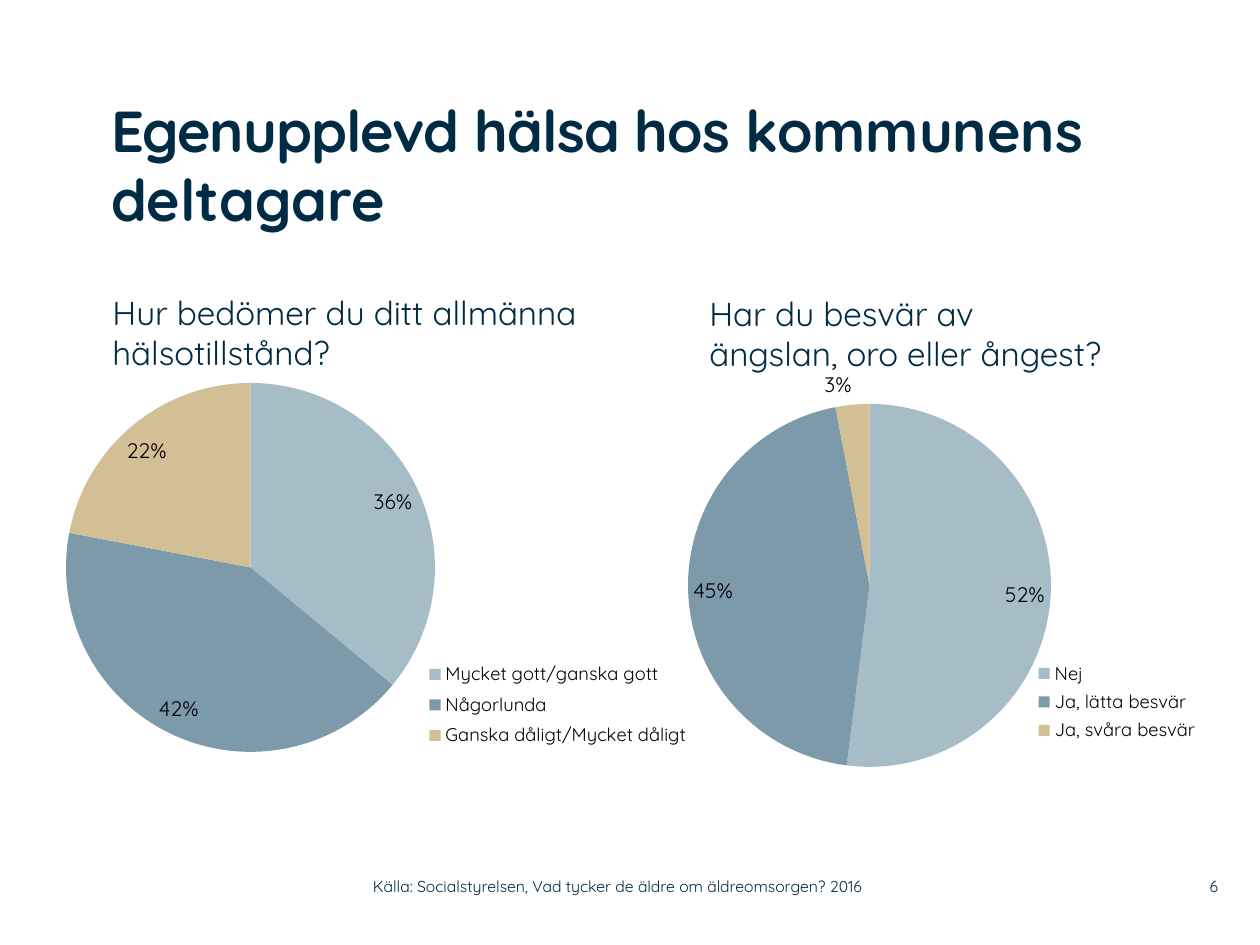
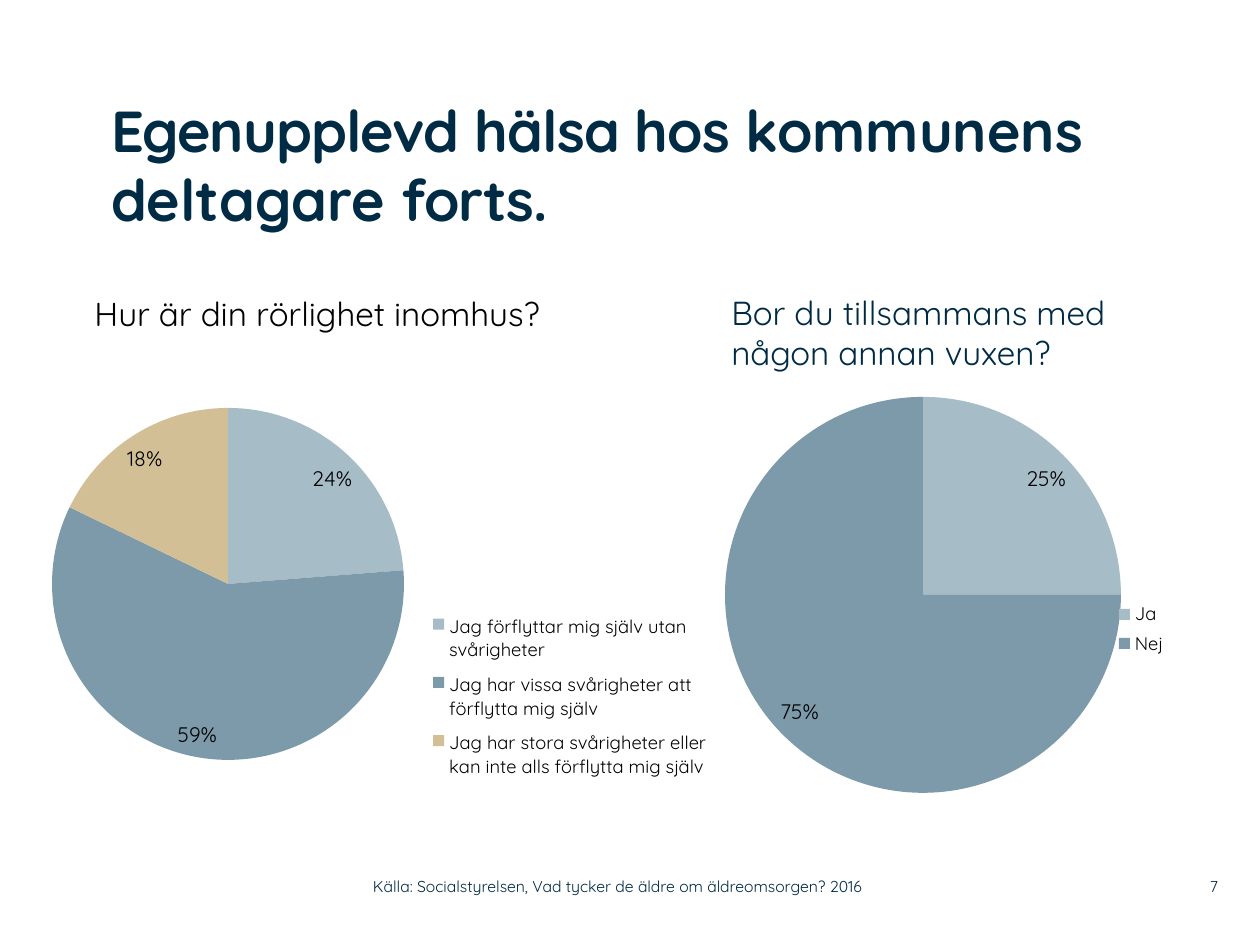
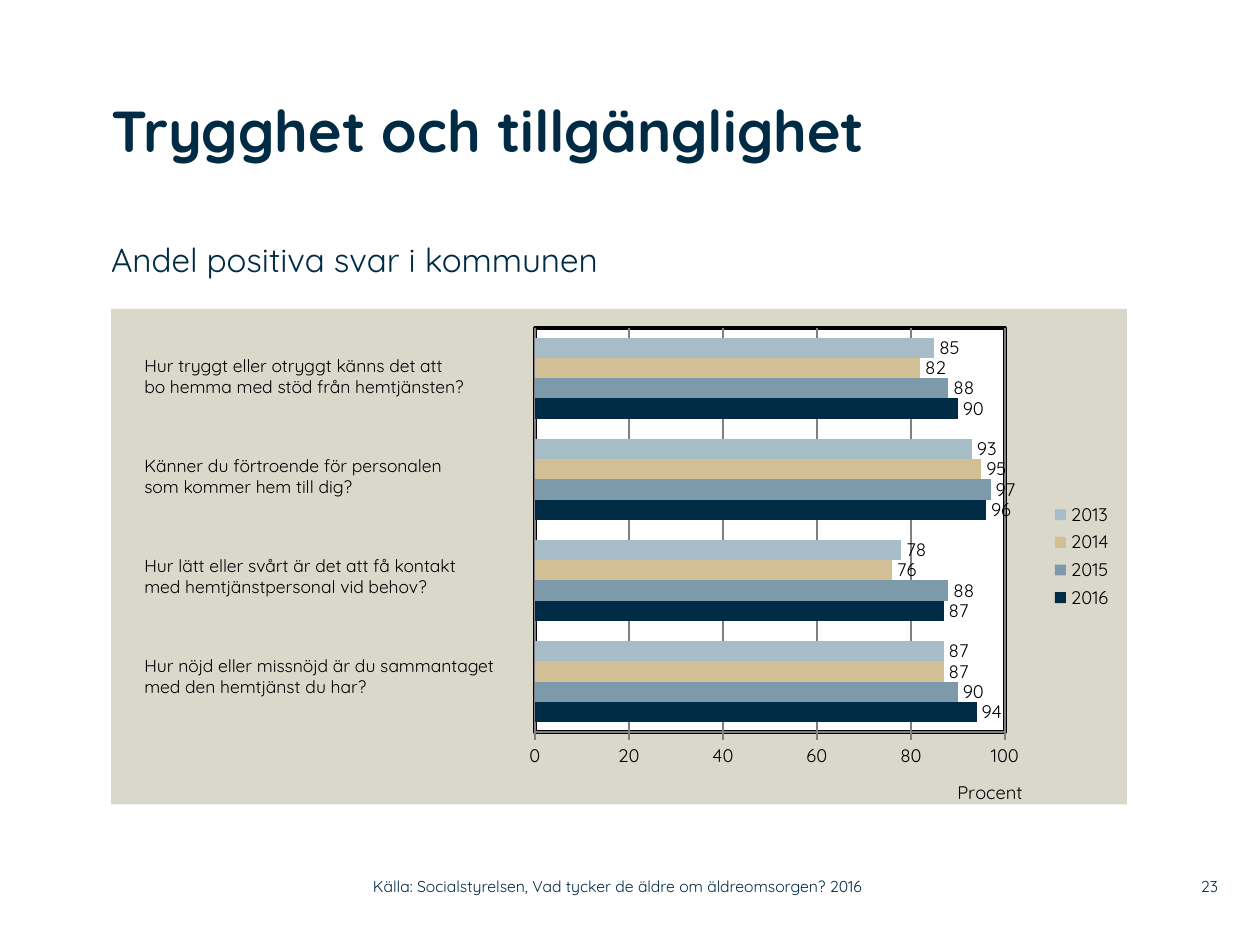
from dataclasses import dataclass
from typing import NamedTuple

from lxml import etree
from pptx import Presentation
from pptx.chart.data import CategoryChartData
from pptx.dml.color import RGBColor
from pptx.enum.chart import (
    XL_CHART_TYPE as ChartType,
    XL_LABEL_POSITION as LabelPos,
    XL_LEGEND_POSITION as LegendPos,
    XL_TICK_MARK as TickMark,
)
from pptx.enum.text import MSO_ANCHOR as Anchor, PP_ALIGN as Align
from pptx.util import Emu, Pt

# Shared look
PX_PER_INCH = 126
SCALE = 914400 / PX_PER_INCH
FONT = "Quicksand"
NAVY, BLACK, WHITE = "002B45", "000000", "FFFFFF"
MIST, STEEL, SAND = "A6BCC6", "7D9AAA", "D3BF96"
PANEL, GRID = "DAD7CB", "808080"
SOURCE_LINE = "Källa: Socialstyrelsen, Vad tycker de äldre om äldreomsorgen? 2016"
NS_C = "http://schemas.openxmlformats.org/drawingml/2006/chart"
NS_A = "http://schemas.openxmlformats.org/drawingml/2006/main"


class Box(NamedTuple):
    left: int
    top: int
    width: int
    height: int

    def emu(self) -> list[Emu]:
        return [px(length) for length in self]


class Run(NamedTuple):
    text: str
    tight: bool = False


@dataclass
class Style:
    size: float
    color: str = NAVY
    bold: bool = False
    inset: bool = False
    align: Align = Align.LEFT
    anchor: Anchor = Anchor.TOP


@dataclass
class Question:
    text: str
    box: Box
    style: Style


@dataclass
class Pie:
    frame: Box
    circle: Box
    legend: Box
    answers: dict[str, int]


TITLE = Style(33, bold=True)
HEADING = Style(19, inset=True)
BLACK_HEADING = Style(19, BLACK, inset=True)
SUBTITLE = Style(19)
BAR_QUESTION = Style(10, BLACK, inset=True)
FOOTER = Style(9, anchor=Anchor.MIDDLE)
PAGE_NUMBER = Style(9, align=Align.RIGHT, anchor=Anchor.MIDDLE)


# Helpers
def px(length: int) -> Emu:
    return Emu(round(length * SCALE))


def rgb(color: str) -> RGBColor:
    return RGBColor.from_string(color)


def apply(target, values: dict) -> None:
    for key, value in values.items():
        setattr(target, key, value)


def set_font(font, size: float, color: str = BLACK, bold: bool = False) -> None:
    apply(font, {"name": FONT, "size": Pt(size), "bold": bold})
    font.color.rgb = rgb(color)


def add_text(slide, box: Box, runs: list[Run], style: Style) -> None:
    frame = slide.shapes.add_textbox(*box.emu()).text_frame
    apply(frame, {"word_wrap": True, "vertical_anchor": style.anchor})
    if not style.inset:
        sides = ("left", "top", "right", "bottom")
        apply(frame, {f"margin_{side}": 0 for side in sides})
    paragraph = frame.paragraphs[0]
    paragraph.alignment = style.align
    for part in runs:
        for index, line in enumerate(part.text.split("\n")):
            if index:
                paragraph.add_line_break()
            run = paragraph.add_run()
            run.text = line
            set_font(run.font, style.size, style.color, style.bold)
            if part.tight:
                run._r.get_or_add_rPr().set("spc", "-50")


def place(element, index: int, frame: Box, part: Box, sized: bool = True) -> None:
    """Fix a chart part at a slide position inside its chart frame."""
    for old in element.findall(f"{{{NS_C}}}layout"):
        element.remove(old)
    layout = etree.Element(f"{{{NS_C}}}layout")
    manual = etree.SubElement(layout, f"{{{NS_C}}}manualLayout")
    settings = {"xMode": "edge", "yMode": "edge",
                "x": (part.left - frame.left) / frame.width,
                "y": (part.top - frame.top) / frame.height}
    if index == 0:
        settings = {"layoutTarget": "inner"} | settings
    if sized:
        settings |= {"w": part.width / frame.width, "h": part.height / frame.height}
    for tag, value in settings.items():
        text = value if isinstance(value, str) else f"{value:.4f}"
        etree.SubElement(manual, f"{{{NS_C}}}{tag}", val=text)
    element.insert(index, layout)


def area_format(fill: str = "", line: str = "", width: float = 1):
    def paint(color: str) -> str:
        if not color:
            return "<a:noFill/>"
        return f'<a:solidFill><a:srgbClr val="{color}"/></a:solidFill>'

    return etree.fromstring(
        f'<c:spPr xmlns:c="{NS_C}" xmlns:a="{NS_A}">{paint(fill)}'
        f'<a:ln w="{Pt(width)}">{paint(line)}</a:ln></c:spPr>')


def add_chart(slide, kind, frame: Box, plot: Box, legend: Box, data, fill: str = ""):
    chart = slide.shapes.add_chart(kind, *frame.emu(), data).chart
    apply(chart, {"has_title": False, "has_legend": True})
    set_font(chart.font, 10)
    apply(chart.legend, {"position": LegendPos.RIGHT, "include_in_layout": False})
    set_font(chart.legend.font, 10.5)
    place(chart.legend._element, 1, frame, legend)
    root = chart._chartSpace.chart
    place(root.plotArea, 0, frame, plot)
    root.addnext(area_format(fill))
    return chart


def add_pie(slide, pie: Pie) -> None:
    data = CategoryChartData()
    data.categories = list(pie.answers)
    data.add_series("Series 1", list(pie.answers.values()))
    chart = add_chart(slide, ChartType.PIE, pie.frame, pie.circle, pie.legend, data)
    plot = chart.plots[0]
    apply(plot, {"vary_by_categories": True, "has_data_labels": True})
    for index, color in zip(range(len(pie.answers)), (MIST, STEEL, SAND)):
        fill = plot.series[0].points[index].format.fill
        fill.solid()
        fill.fore_color.rgb = rgb(color)
    apply(plot.data_labels, {
        "show_value": True, "number_format": '0"%"',
        "number_format_is_linked": False, "position": LabelPos.BEST_FIT})
    set_font(plot.data_labels.font, 12)


def add_bars(slide, years: dict[str, tuple[str, list[int]]]) -> None:
    frame = Box(111, 309, 1016, 501)
    data = CategoryChartData()
    data.categories = ["1", "2", "3", "4"]
    for year, (_, shares) in years.items():
        data.add_series(year, shares)
    chart = add_chart(slide, ChartType.BAR_CLUSTERED, frame, Box(535, 328, 470, 409),
                      Box(1048, 501, 68, 116), data, PANEL)
    chart._chartSpace.chart.plotArea.append(area_format(WHITE, BLACK, 2))

    # Bars and their values
    apply(chart.plots[0], {"gap_width": 100, "overlap": 0, "vary_by_categories": False})
    for series, (color, _) in zip(chart.plots[0].series, years.values()):
        series.format.fill.solid()
        series.format.fill.fore_color.rgb = rgb(color)
        apply(series.data_labels, {"show_value": True, "position": LabelPos.OUTSIDE_END})
        set_font(series.data_labels.font, 10.5)

    # Percent scale
    chart.category_axis.visible = False
    scale = chart.value_axis
    apply(scale, {
        "minimum_scale": 0, "maximum_scale": 100, "major_unit": 20,
        "has_major_gridlines": True, "has_title": True,
        "major_tick_mark": TickMark.OUTSIDE, "minor_tick_mark": TickMark.NONE})
    set_font(scale.tick_labels.font, 10.5)
    for line in (scale.format.line, scale.major_gridlines.format.line):
        line.color.rgb = rgb(GRID)
        line.width = Pt(1)
    unit = scale.axis_title.text_frame.paragraphs[0].add_run()
    unit.text = "Procent"
    set_font(unit.font, 10.5)
    place(scale.axis_title._element, 1, frame, Box(954, 781, 65, 22), sized=False)


def add_page(deck, title: list[Run], number: int):
    slide = deck.slides.add_slide(deck.slide_layouts[6])
    add_text(slide, Box(111, 95, 1042, 179), title, TITLE)
    add_text(slide, Box(1159, 868, 59, 37), [Run(str(number))], PAGE_NUMBER)
    add_text(slide, Box(373, 868, 558, 37), [Run(SOURCE_LINE)], FOOTER)
    return slide


def add_pie_page(deck, title: list[Run], number: int,
                 questions: list[Question], pies: list[Pie]) -> None:
    slide = add_page(deck, title, number)
    for question in questions:
        add_text(slide, question.box, [Run(question.text)], question.style)
    for pie in pies:
        add_pie(slide, pie)


# Content
HEALTH_TITLE = [Run("Egenupplevd hälsa hos ", tight=True), Run("kommunens deltagare")]
HEALTH_QUESTIONS = [
    Question("Hur bedömer du ditt allmänna hälsotillstånd?",
             Box(100, 286, 513, 93), HEADING),
    Question("Har du besvär av\nängslan, oro eller ångest?",
             Box(697, 287, 467, 93), HEADING),
]
HEALTH_PIES = [
    Pie(Box(49, 352, 683, 431), Box(66, 383, 369, 369), Box(424, 656, 268, 98),
        {"Mycket gott/ganska gott": 36, "Någorlunda": 42,
         "Ganska dåligt/Mycket dåligt": 22}),
    Pie(Box(617, 354, 683, 431), Box(688, 404, 363, 363), Box(1033, 657, 168, 90),
        {"Nej": 52, "Ja, lätta besvär": 45, "Ja, svåra besvär": 3}),
]

DAILY_TITLE = [HEALTH_TITLE[0], Run("kommunens deltagare "), Run("forts.", tight=True)]
DAILY_QUESTIONS = [
    Question("Hur är din rörlighet inomhus?", Box(82, 287, 513, 53), BLACK_HEADING),
    Question("Bor du tillsammans med någon annan vuxen?",
             Box(719, 286, 467, 93), HEADING),
]
DAILY_PIES = [
    Pie(Box(616, 381, 683, 431), Box(725, 397, 396, 396), Box(1113, 597, 56, 64),
        {"Ja": 25, "Nej": 75}),
    Pie(Box(35, 369, 683, 431), Box(52, 408, 352, 352), Box(427, 604, 286, 186),
        {"Jag förflyttar mig själv utan svårigheter": 24,
         "Jag har vissa svårigheter att förflytta mig själv": 59,
         "Jag har stora svårigheter eller kan inte alls förflytta mig själv": 18}),
]

SAFETY_QUESTIONS = [
    "Hur tryggt eller otryggt känns det att\nbo hemma med stöd från hemtjänsten?",
    "Känner du förtroende för personalen\nsom kommer hem till dig?",
    "Hur lätt eller svårt är det att få kontakt\nmed hemtjänstpersonal vid behov?",
    "Hur nöjd eller missnöjd är du sammantaget med den hemtjänst du har?",
]
SAFETY_YEARS = {
    "2016": (NAVY, [94, 87, 96, 90]),
    "2015": (STEEL, [90, 88, 97, 88]),
    "2014": (SAND, [87, 76, 95, 82]),
    "2013": (MIST, [87, 78, 93, 85]),
}


def main() -> None:
    deck = Presentation()
    apply(deck, {"slide_width": px(1260), "slide_height": px(945)})

    # Health and daily life
    add_pie_page(deck, HEALTH_TITLE, 6, HEALTH_QUESTIONS, HEALTH_PIES)
    add_pie_page(deck, DAILY_TITLE, 7, DAILY_QUESTIONS, DAILY_PIES)

    # Safety and availability
    safety = add_page(deck, [Run("Trygghet och tillgänglighet")], 23)
    add_text(safety, Box(111, 239, 873, 57),
             [Run("Andel positiva svar i kommunen")], SUBTITLE)
    add_bars(safety, SAFETY_YEARS)
    for row, question in enumerate(SAFETY_QUESTIONS):
        add_text(safety, Box(132, 349 + 100 * row, 380, 55),
                 [Run(question)], BAR_QUESTION)

    deck.save("out.pptx")


if __name__ == "__main__":
    main()
